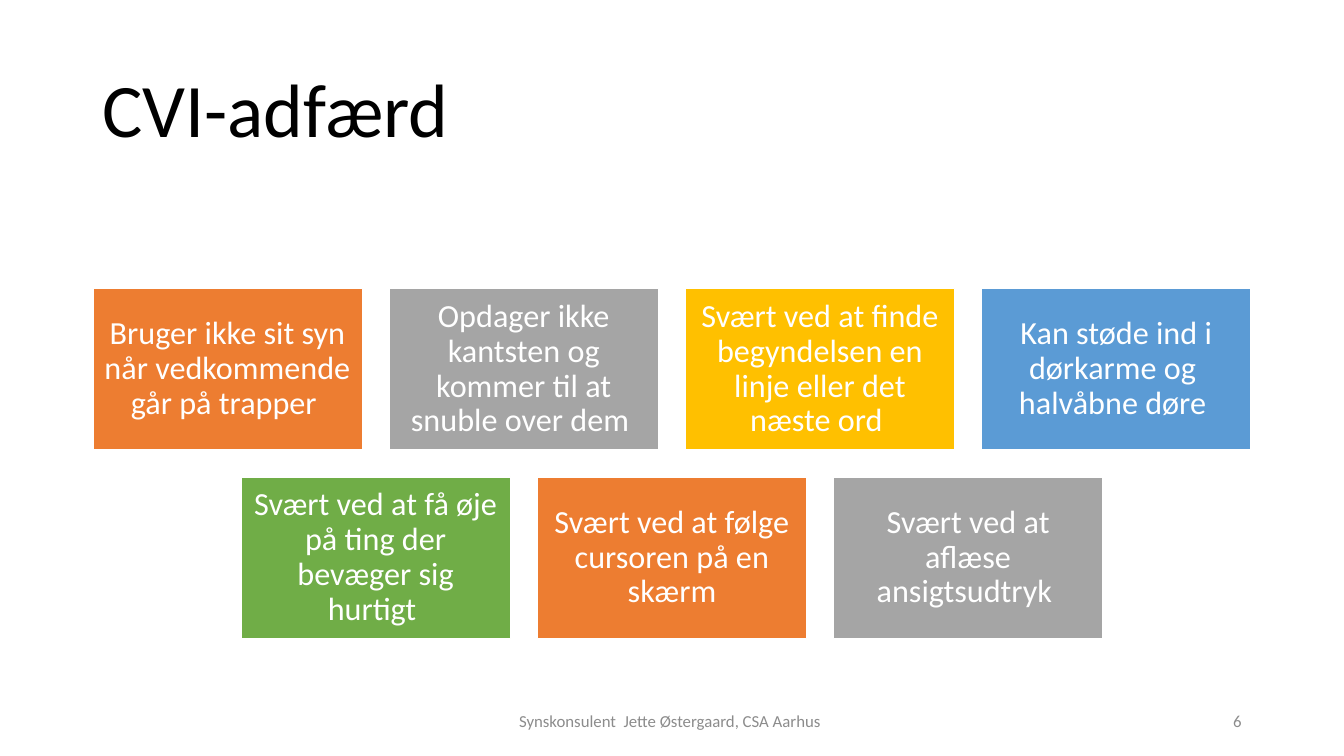
from pptx import Presentation
from pptx.dml.color import RGBColor
from pptx.enum.shapes import MSO_SHAPE
from pptx.enum.text import MSO_ANCHOR, PP_ALIGN
from pptx.util import Pt

TITLE = "CVI-adfærd"
FOOTER = "Synskonsulent  Jette Østergaard, CSA Aarhus "
PAGE = "6"
BEHAVIOUR_ROWS = [
    [
        ("Bruger ikke sit syn når vedkommende går på trapper ", "orange"),
        ("Opdager ikke kantsten og kommer til at snuble over dem ", "grey"),
        ("Svært ved at finde begyndelsen en linje eller det næste ord ", "gold"),
        ("Kan støde ind i dørkarme og  halvåbne døre ", "blue"),
    ],
    [
        ("Svært ved at få øje på ting der bevæger sig hurtigt ", "green"),
        ("Svært ved at følge cursoren på en skærm", "orange"),
        ("Svært ved at aflæse ansigtsudtryk ", "grey"),
    ],
]

THEME = {
    "font": "Calibri",
    "sizes": {"title": 54, "card": 23, "footer": 12},
    "colours": {
        "black": "000000", "white": "FFFFFF", "muted": "8C8C8C",
        "orange": "ED7D31", "grey": "A5A5A5", "gold": "FFC000",
        "blue": "5B9BD5", "green": "70AD47",
    },
}

SLIDE_W, SLIDE_H = 960, 540
CARD_W, CARD_H, GAP = 192.4, 115.4, 19.2
CARDS_TOP = 206
FOOTER_TOP, FOOTER_H = 500.5, 28.75


def colour(name):
    return RGBColor.from_string(THEME["colours"][name])


def apply(target, values):
    for attribute, value in values.items():
        setattr(target, attribute, value)


def write(shape, wording, role, ink, align, spacing=1.0, inset=None):
    """Put one middle-anchored, wrapped paragraph into the shape."""
    frame = shape.text_frame
    apply(frame, {"word_wrap": True, "vertical_anchor": MSO_ANCHOR.MIDDLE})
    if inset is not None:
        sides = ("left", "right", "top", "bottom")
        apply(frame, {f"margin_{side}": Pt(inset) for side in sides})
    paragraph = frame.paragraphs[0]
    apply(paragraph, {"alignment": align, "line_spacing": spacing})
    run = paragraph.add_run()
    run.text = wording
    apply(run.font, {"name": THEME["font"], "size": Pt(THEME["sizes"][role])})
    run.font.color.rgb = colour(ink)


def add_card(slide, left, top, wording, fill):
    card = slide.shapes.add_shape(
        MSO_SHAPE.RECTANGLE, Pt(left), Pt(top), Pt(CARD_W), Pt(CARD_H))
    card.shadow.inherit = False
    card.fill.solid()
    card.fill.fore_color.rgb = colour(fill)
    card.line.color.rgb = colour("white")
    card.line.width = Pt(1)
    write(card, wording, "card", "white", PP_ALIGN.CENTER, 0.9, 7.2)


def main():
    deck = Presentation()
    apply(deck, {"slide_width": Pt(SLIDE_W), "slide_height": Pt(SLIDE_H)})
    slide = deck.slides.add_slide(deck.slide_layouts[6])

    heading = slide.shapes.add_textbox(Pt(66), Pt(28.75), Pt(828), Pt(104.4))
    write(heading, TITLE, "title", "black", PP_ALIGN.LEFT, 0.9)

    for row, cards in enumerate(BEHAVIOUR_ROWS):
        row_width = len(cards) * (CARD_W + GAP) - GAP
        row_left = (SLIDE_W - row_width) / 2
        top = CARDS_TOP + row * (CARD_H + GAP)
        for column, (wording, fill) in enumerate(cards):
            add_card(slide, row_left + column * (CARD_W + GAP), top, wording, fill)

    for wording, left, width, align in (
        (FOOTER, 318, 324, PP_ALIGN.CENTER),
        (PAGE, 678, 216, PP_ALIGN.RIGHT),
    ):
        note = slide.shapes.add_textbox(
            Pt(left), Pt(FOOTER_TOP), Pt(width), Pt(FOOTER_H))
        write(note, wording, "footer", "muted", align)

    deck.save("out.pptx")


if __name__ == "__main__":
    main()
